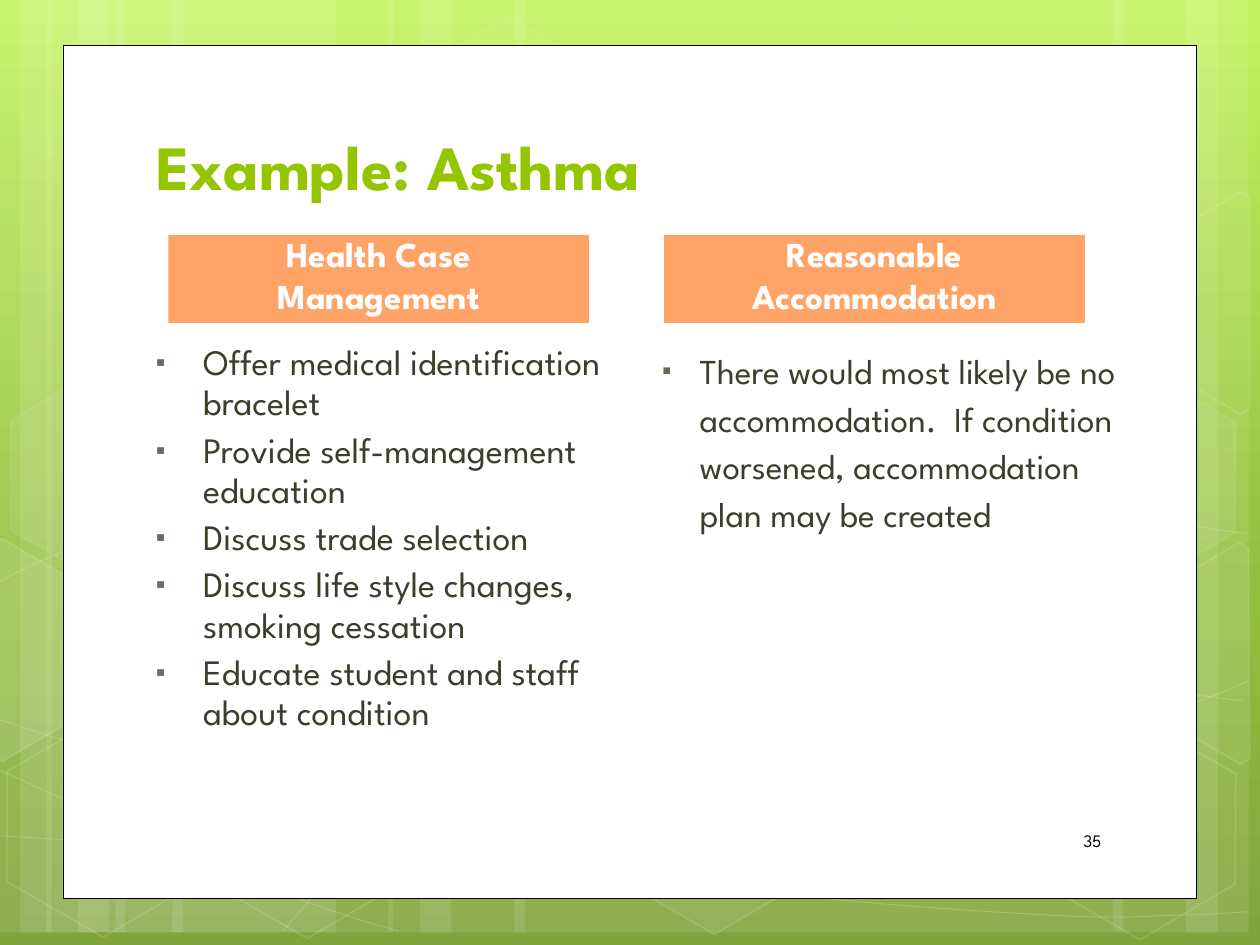
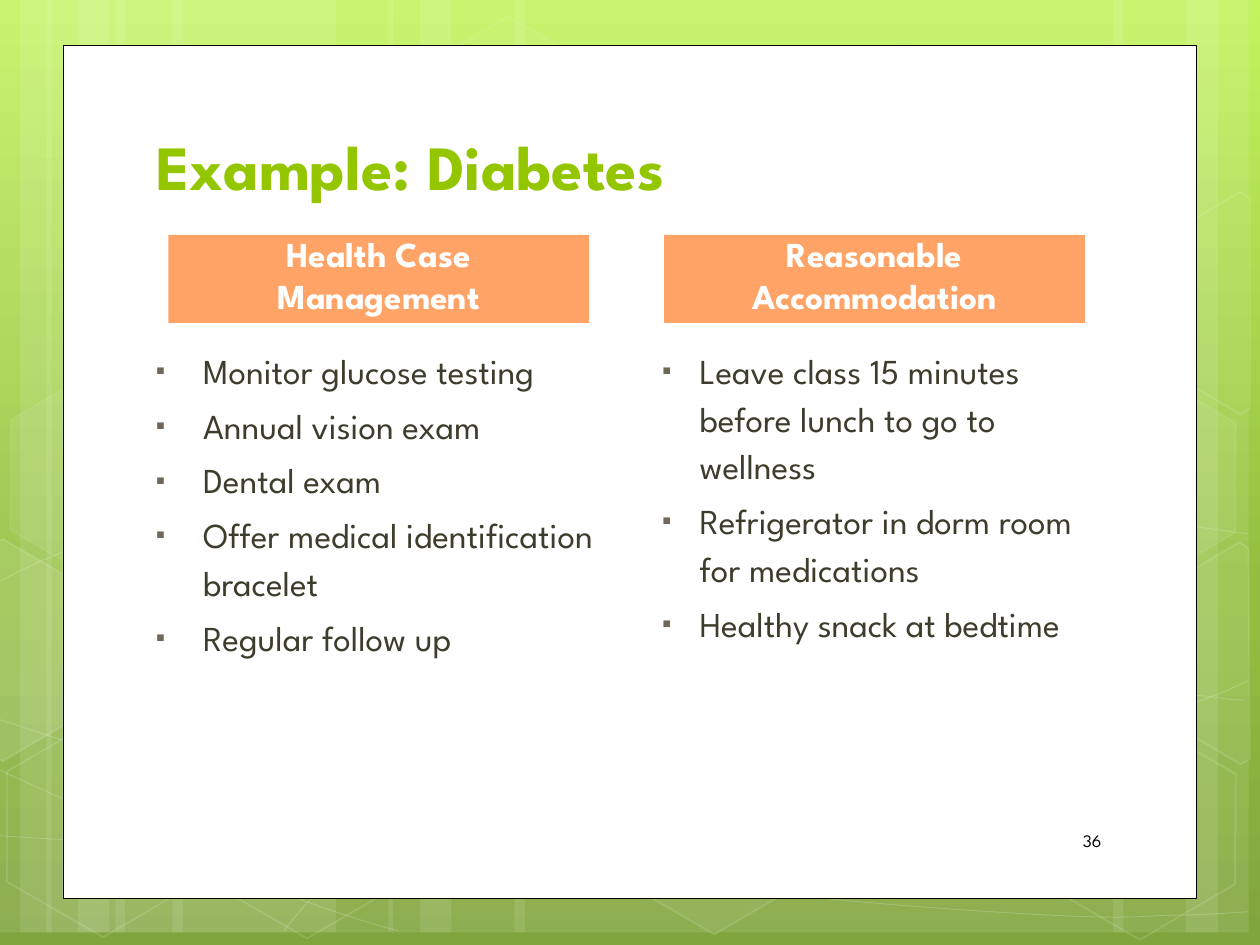
from copy import deepcopy
from math import cos, radians, sin

from lxml.etree import SubElement
from pptx import Presentation
from pptx.dml.color import RGBColor
from pptx.enum.shapes import MSO_SHAPE as Preset
from pptx.enum.text import MSO_ANCHOR as Anchor, MSO_AUTO_SIZE as AutoSize, PP_ALIGN as Align
from pptx.oxml.ns import qn
from pptx.util import Pt

FONT = "League Spartan"
WHITE, BLACK = "FFFFFF", "000000"
GREEN, ORANGE = "94C600", "FFA466"
BODY, BULLET = "3E3D2D", "71685A"
BACKGROUND = [(0, "C3F35F"), (0.62, "93BF3F"), (1, "81A53E")]
TILT = 30  # degrees, for every hexagon


def paint(fill, colour, opacity=100):
    """Fill with a hex colour; an opacity of 0 leaves no fill."""
    if not opacity:
        fill.background()
        return
    fill.solid()
    fill.fore_color.rgb = RGBColor.from_string(colour)
    if opacity < 100:
        solid = fill._xPr.find(qn("a:solidFill"))
        SubElement(solid[0], qn("a:alpha"), val=str(opacity * 1000))


def write(frame, *lines, size=20, colour=BODY, bold=False, align=Align.LEFT,
          anchor=Anchor.TOP, before=0, spacing=1.0, indent=None):
    """Write one paragraph per line; an indent turns them into bullets."""
    frame.word_wrap = True
    frame.auto_size = AutoSize.NONE
    frame.vertical_anchor = anchor
    for number, line in enumerate(lines):
        para = frame.add_paragraph() if number else frame.paragraphs[0]
        para.alignment = align
        para.space_before = Pt(before)
        para.line_spacing = spacing
        if indent:
            props = para._p.get_or_add_pPr()
            props.set("marL", str(Pt(27)))
            props.set("indent", str(-Pt(indent)))
            bullet_colour = SubElement(props, qn("a:buClr"))
            SubElement(bullet_colour, qn("a:srgbClr"), val=BULLET)
            SubElement(props, qn("a:buSzPct"), val="76000")
            SubElement(props, qn("a:buFont"), typeface="Arial")
            SubElement(props, qn("a:buChar"), char="▪")
        span = para.add_run()
        span.text = line
        span.font.name = FONT
        span.font.size = Pt(size)
        span.font.bold = bold
        paint(span.font.fill, colour)


deck = Presentation()
deck.slide_width, deck.slide_height = Pt(720), Pt(540)
layout = deck.slide_layouts[5]
for holder in list(layout.placeholders)[1:]:
    holder.element.getparent().remove(holder.element)

# Gradient background, shared through the layout
gradient = layout.background.fill
gradient.gradient()
gradient.gradient_angle = 270
stop_list = layout.element.find(".//" + qn("a:gsLst"))
stop_list.append(deepcopy(stop_list[-1]))
for stop, (position, colour) in zip(gradient.gradient_stops, BACKGROUND):
    stop.position = position
    stop.color.rgb = RGBColor.from_string(colour)

# Backdrop data: bands (left, width)
bands = [(66, 126), (-6.5, 36), (11.5, 60), (98.5, 126), (26.5, 36), (44.5, 60),
         (516, 126), (677.5, 36), (636, 60), (294, 222), (222, 36), (240, 60)]

# Waves: a start point, then three points (control, control, end) for each curve
waves = [
    [(-7, 477), (32, 480), (71, 482), (125, 480), (179, 480), (245, 479), (317, 471),
     (390, 464), (492, 450), (557, 436), (624, 423), (690, 401), (713, 389)],
    [(-7, 336), (13, 325), (34, 314), (75, 303), (116, 292), (174, 276), (238, 271),
     (302, 266), (379, 266), (458, 271), (537, 276), (670, 300), (713, 305)],
    [(-9, 436), (78, 476), (166, 516), (228, 532)],
    [(-7, 409), (15, 416), (37, 424), (79, 436), (122, 447), (184, 464), (244, 477),
     (304, 489), (380, 502), (439, 510), (499, 517), (563, 521), (601, 523),
     (639, 525), (649, 524), (667, 523), (686, 523), (699, 522), (713, 521)],
    [(162, 532), (173, 518), (187, 503), (204, 490), (222, 477), (246, 462), (266, 453),
     (287, 443), (299, 439), (325, 431), (352, 424), (400, 413), (426, 409),
     (451, 404), (454, 404), (477, 402), (499, 400), (534, 398), (559, 397),
     (584, 397), (626, 397), (626, 397), (640, 397), (660, 397), (673, 397),
     (687, 397), (698, 399), (705, 400), (711, 400), (709, 400), (711, 400)],
]

# Hexagons: left, top, fill opacity, line opacity
hexagons = [(227.5, 18, 4, 8), (345, 416, 6, 12), (-4.3, 417.6, 0, 12),
            (-2.2, 216.7, 7, 8), (54.7, 317.5, 0, 12), (112.3, 418.3, 0, 12),
            (56.2, 116, 0, 12), (588.2, 419, 0, 12), (588.2, 218.2, 7, 8)]

# Hexagons cut off by the slide edge: centre, corners as tilted, fill opacity
cut_hexagons = [
    ((13, 378), [(-6.5, 313), (1.4, 308), (56, 340), (56, 403), (1.4, 435), (-6.5, 430)], 10),
    ((696.2, 366.5),
     [(654.5, 342), (708.5, 310), (713.5, 314), (714.2, 434), (709, 437), (653.8, 404.6)], 4),
    ((696.2, 166.3),
     [(654.5, 142), (708.5, 110), (714.2, 113), (714.2, 233.3), (709, 237), (653.8, 204.5)], 0),
]

# Draw the backdrop on a page, then move it to the layout
page = deck.slides.add_slide(layout)
shapes = page.shapes
backdrop = []  # shape, fill opacity, line opacity, line width

for left, width in bands:
    band = shapes.add_shape(Preset.RECTANGLE, Pt(left), Pt(-7.2), Pt(width), Pt(540))
    backdrop.append((band, 10, 0, 0))

for (x, y), *others in waves:
    builder = shapes.build_freeform(Pt(x), Pt(y))
    builder.add_line_segments([(Pt(x), Pt(y)) for x, y in others], close=False)
    wave = builder.convert_to_shape()
    outline = wave.element.find(".//" + qn("a:path"))
    for number, segment in enumerate(outline.findall(qn("a:lnTo"))):
        if number % 3 == 0:
            curve = SubElement(outline, qn("a:cubicBezTo"))
        curve.append(segment[0])
        outline.remove(segment)
    backdrop.append((wave, 0, 20, 0.5))

for left, top, fill_opacity, line_opacity in hexagons:
    hexagon = shapes.add_shape(Preset.HEXAGON, Pt(left), Pt(top), Pt(126), Pt(109.4))
    hexagon.adjustments[0] = 0.285
    hexagon.rotation = TILT
    backdrop.append((hexagon, fill_opacity, line_opacity, 1))

cosine, sine = cos(radians(TILT)), sin(radians(TILT))
for (cx, cy), corners, fill_opacity in cut_hexagons:
    upright = [(Pt(cx + (x - cx) * cosine + (y - cy) * sine),
                Pt(cy - (x - cx) * sine + (y - cy) * cosine)) for x, y in corners]
    builder = shapes.build_freeform(*upright[0])
    builder.add_line_segments(upright[1:], close=True)
    hexagon = builder.convert_to_shape()
    hexagon.rotation = TILT
    backdrop.append((hexagon, fill_opacity, 12, 1))

panel = shapes.add_shape(Preset.RECTANGLE, Pt(36), Pt(26), Pt(648), Pt(487.3))
backdrop.append((panel, 100, 100, 0.5))

for shape, fill_opacity, line_opacity, line_width in backdrop:
    shape.shadow.inherit = False
    paint(shape.fill, WHITE, fill_opacity)
    paint(shape.line.fill, BLACK if shape is panel else WHITE, line_opacity)
    if line_width:
        shape.line.width = Pt(line_width)
    layout.shapes.element.append(shape.element)

# Each page: title, number, columns of (heading, left, body left, body width,
# body height, indent, text size, line spacing, bullets)
CASE, ACCOMMODATION = "Health Case Management", "Reasonable Accommodation"
topics = [
    ("Example: Asthma", "35", [
        (CASE, 96.2, 82, 269.3, 286.6, 27, 20.4, 0.94, [
            "Offer medical identification bracelet",
            "Provide self-management education",
            "Discuss trade selection",
            "Discuss life style changes, smoking cessation",
            "Educate student and staff about condition"]),
        (ACCOMMODATION, 379.5, 365.7, 280.8, 267.1, 21.4, 20, 1.14, [
            "There would most likely be no accommodation.  If condition worsened, "
            "accommodation plan may be created"]),
    ]),
    ("Example: Diabetes", "36", [
        (CASE, 96.2, 82, 269.3, 286.6, 27, 20, 1.14, [
            "Monitor glucose testing",
            "Annual vision exam",
            "Dental exam",
            "Offer medical identification bracelet",
            "Regular follow up"]),
        (ACCOMMODATION, 379.5, 365.7, 269.3, 267.1, 21.4, 20, 1.14, [
            "Leave class 15 minutes before lunch to go to wellness",
            "Refrigerator in dorm room for medications",
            "Healthy snack at bedtime"]),
    ]),
]

for index, (title_text, page_number, columns) in enumerate(topics):
    if index:
        page = deck.slides.add_slide(layout)
    title = page.shapes.title
    title.left, title.top, title.width, title.height = Pt(82.1), Pt(38.9), Pt(553), Pt(80.6)
    write(title.text_frame, title_text, size=36, colour=GREEN, bold=True, anchor=Anchor.BOTTOM)

    for heading, left, body_left, width, height, indent, size, spacing, bullets in columns:
        box = page.shapes.add_textbox(Pt(left), Pt(134.2), Pt(240.5), Pt(50.4))
        paint(box.fill, ORANGE)
        write(box.text_frame, heading, colour=WHITE, bold=True, align=Align.CENTER,
              anchor=Anchor.BOTTOM, before=4)
        box = page.shapes.add_textbox(Pt(body_left), Pt(192.6), Pt(width), Pt(height))
        write(box.text_frame, *bullets, size=size, before=4, spacing=spacing, indent=indent)

    box = page.shapes.add_textbox(Pt(524.2), Pt(467), Pt(112.3), Pt(26.6))
    write(box.text_frame, page_number, size=10, colour=BLACK, align=Align.RIGHT,
          anchor=Anchor.MIDDLE)

deck.save("out.pptx")
